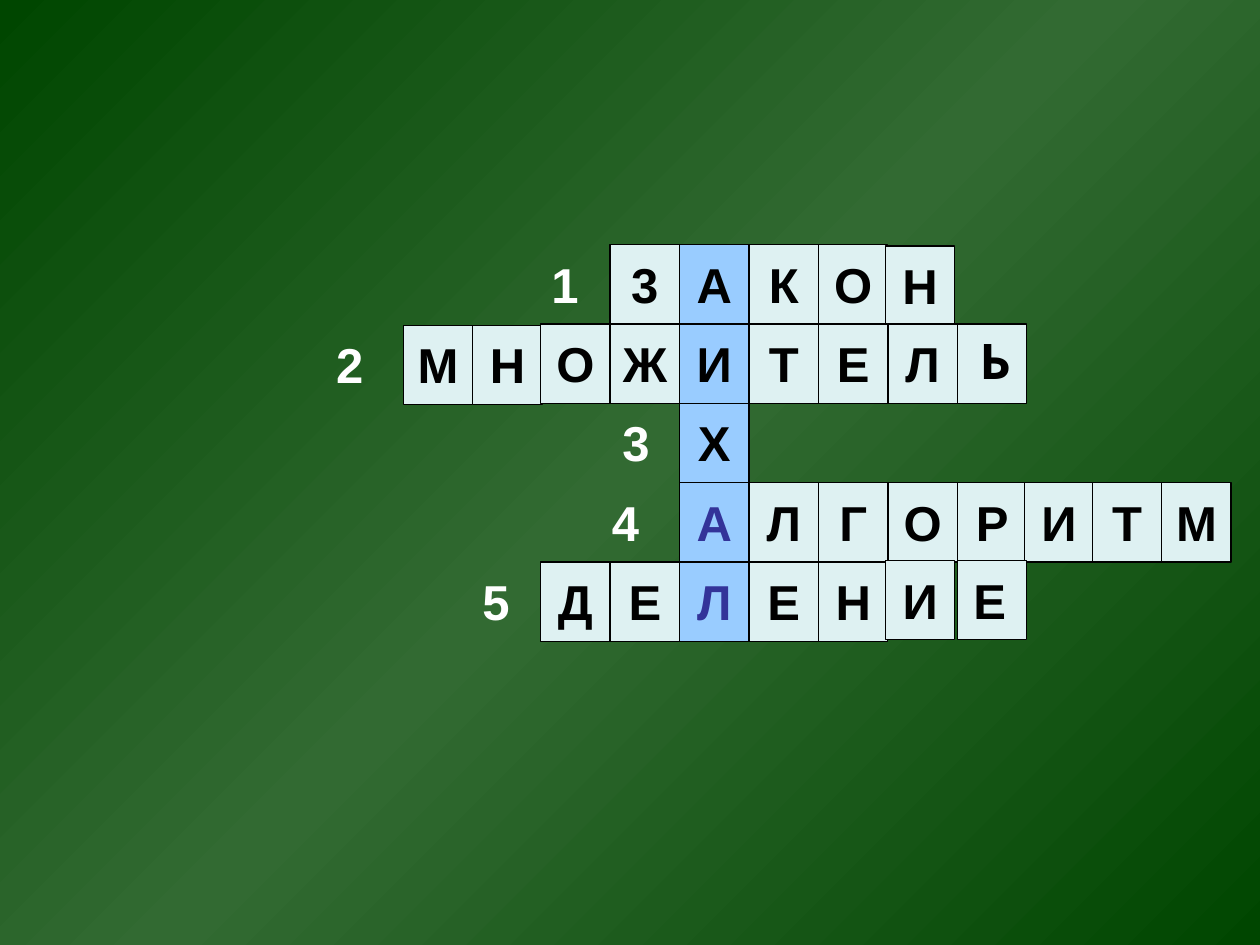
from copy import deepcopy
from dataclasses import dataclass

from pptx import Presentation
from pptx import util as u
from pptx.dml.color import RGBColor
from pptx.enum import shapes, text


@dataclass(frozen=True)
class Theme:
    edge: str = "004600"
    middle: str = "326A32"
    tile: str = "DEF1F2"
    key_tile: str = "99CCFF"
    ink: str = "000000"
    key_ink: str = "333399"
    number: str = "FFFFFF"
    font: str = "Arial"
    soft_font: str = "Karla"
    size: float = 28
    line: float = 0.75


THEME = Theme()

# Grid in centimetres; column 0 holds the key word
KEY_LEFT, TOP = 13.7, 4.93
TILE_WIDTH, TILE_HEIGHT = 1.4, 1.6
LETTER_INSET, LETTER_HEIGHT = 0.2, 1.17

# Word, first column, left of the number, downward shift of the number
ROWS = [
    ("3АКОН", -1, 10.69, 0),
    ("МНОЖИТЕЛЬ", -4, 6.35, 0.03),
    ("Х", 0, 12.12, 0),
    ("АЛГОРИТМ", 0, 11.91, 0),
    ("ДЕЛЕНИЕ", -2, 9.3, 0),
]

# Small shifts of single tiles: (row, column) -> (right, down)
SHIFTS = {
    (0, 3): (-0.05, 0.03),
    (1, -4): (0.03, 0.03), (1, -3): (0.03, 0.03),
    (3, 5): (-0.05, 0), (3, 6): (-0.08, 0), (3, 7): (-0.08, 0),
    (4, 3): (-0.05, -0.03), (4, 4): (0, -0.03),
}
LETTER_SHIFTS = {(4, 4): -0.05}
KEY_INK_ROWS = (3, 4)


def set_attributes(target, values):
    for name, value in values.items():
        setattr(target, name, value)


def paint_background(slide):
    fill = slide.background.fill
    fill.gradient()
    fill.gradient_angle = 315
    first = fill.gradient_stops[0]._gs
    first.addnext(deepcopy(first))
    stops = zip(fill.gradient_stops, (0, 0.5, 1),
                (THEME.edge, THEME.middle, THEME.edge))
    for stop, position, color in stops:
        stop.position = position
        stop.color.rgb = RGBColor.from_string(color)


def add_tile(slide, left, top, color):
    tile = slide.shapes.add_shape(
        shapes.MSO_SHAPE.RECTANGLE, u.Cm(left), u.Cm(top),
        u.Cm(TILE_WIDTH), u.Cm(TILE_HEIGHT))
    tile.shadow.inherit = False
    tile.fill.solid()
    tile.fill.fore_color.rgb = RGBColor.from_string(color)
    tile.line.color.rgb = RGBColor.from_string(THEME.ink)
    tile.line.width = u.Pt(THEME.line)


def add_text(slide, box, content, color, font, frame_format, alignment):
    shape = slide.shapes.add_textbox(*(u.Cm(length) for length in box))
    set_attributes(shape.text_frame, frame_format)
    paragraph = shape.text_frame.paragraphs[0]
    paragraph.alignment = alignment
    run = paragraph.add_run()
    run.text = content
    set_attributes(run.font, {"name": font, "size": u.Pt(THEME.size), "bold": True})
    run.font.color.rgb = RGBColor.from_string(color)


def add_letter(slide, left, top, content, color):
    frame_format = {
        "word_wrap": True, "vertical_anchor": text.MSO_ANCHOR.MIDDLE,
        "margin_left": 0, "margin_right": 0, "margin_top": 0, "margin_bottom": 0,
    }
    box = (left, top + LETTER_INSET, TILE_WIDTH, LETTER_HEIGHT)
    add_text(slide, box, content, color, THEME.font, frame_format,
             text.PP_ALIGN.CENTER)


def add_soft_sign(slide, left, top):
    frame_format = {"word_wrap": False,
                    "auto_size": text.MSO_AUTO_SIZE.SHAPE_TO_FIT_TEXT}
    add_text(slide, (left + 0.2, top, 0.9, 1.45), "Ь", THEME.ink,
             THEME.soft_font, frame_format, text.PP_ALIGN.LEFT)


def add_word(slide, row, word, first_column):
    for column, letter in enumerate(word, first_column):
        right, down = SHIFTS.get((row, column), (0, 0))
        left = KEY_LEFT + column * TILE_WIDTH + right
        top = TOP + row * TILE_HEIGHT + down
        is_key = column == 0
        add_tile(slide, left, top, THEME.key_tile if is_key else THEME.tile)
        if letter == "Ь":
            add_soft_sign(slide, left, top)
            continue
        ink = THEME.key_ink if is_key and row in KEY_INK_ROWS else THEME.ink
        add_letter(slide, left + LETTER_SHIFTS.get((row, column), 0), top,
                   letter, ink)


def main():
    presentation = Presentation()
    presentation.slide_width = u.Cm(25.4)
    presentation.slide_height = u.Cm(19.05)
    slide = presentation.slides.add_slide(presentation.slide_layouts[6])
    paint_background(slide)

    # Crossword rows with their numbers
    for row, (word, first_column, number_left, number_down) in enumerate(ROWS):
        add_word(slide, row, word, first_column)
        add_letter(slide, number_left, TOP + row * TILE_HEIGHT + number_down,
                   str(row + 1), THEME.number)

    presentation.save("out.pptx")


if __name__ == "__main__":
    main()
